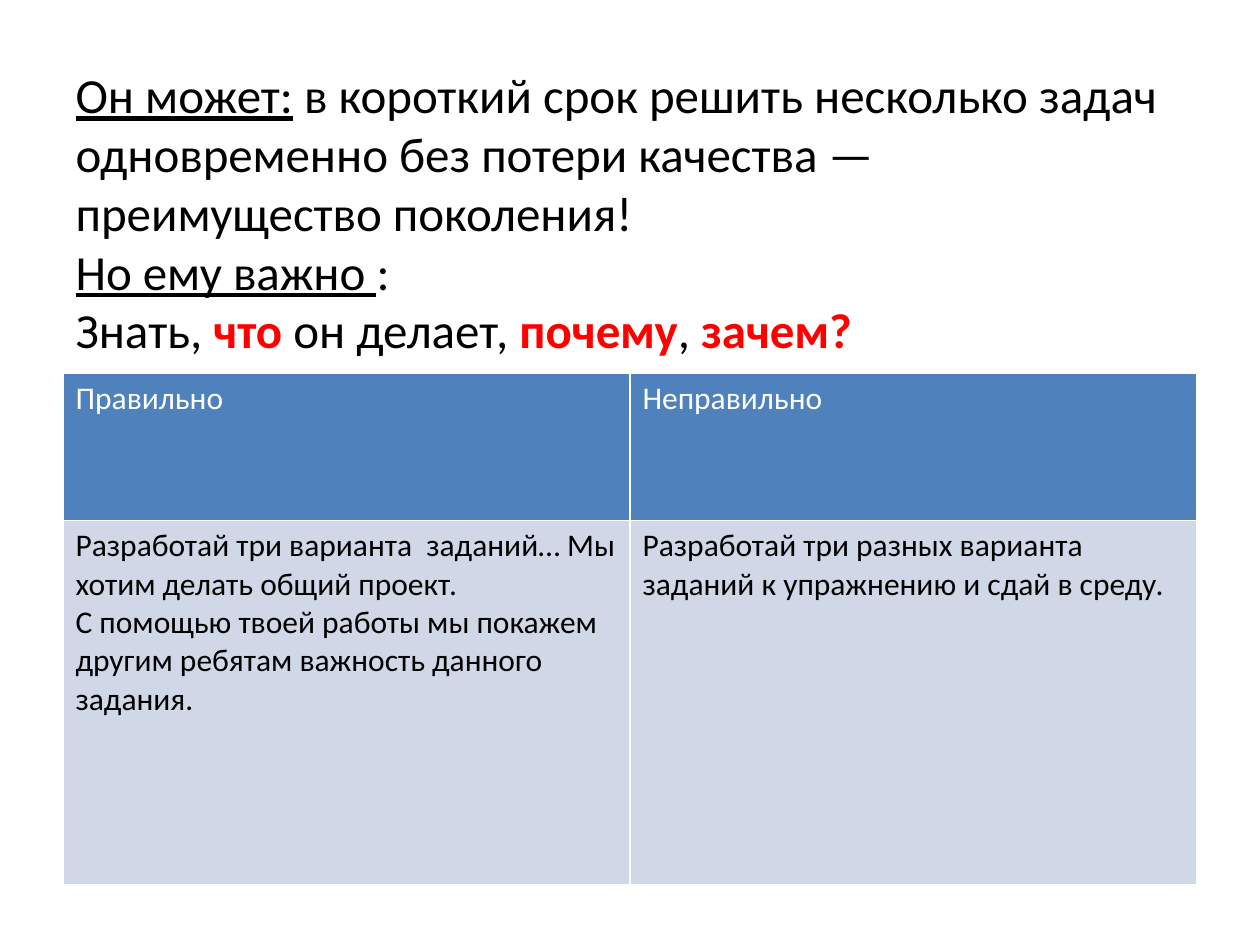
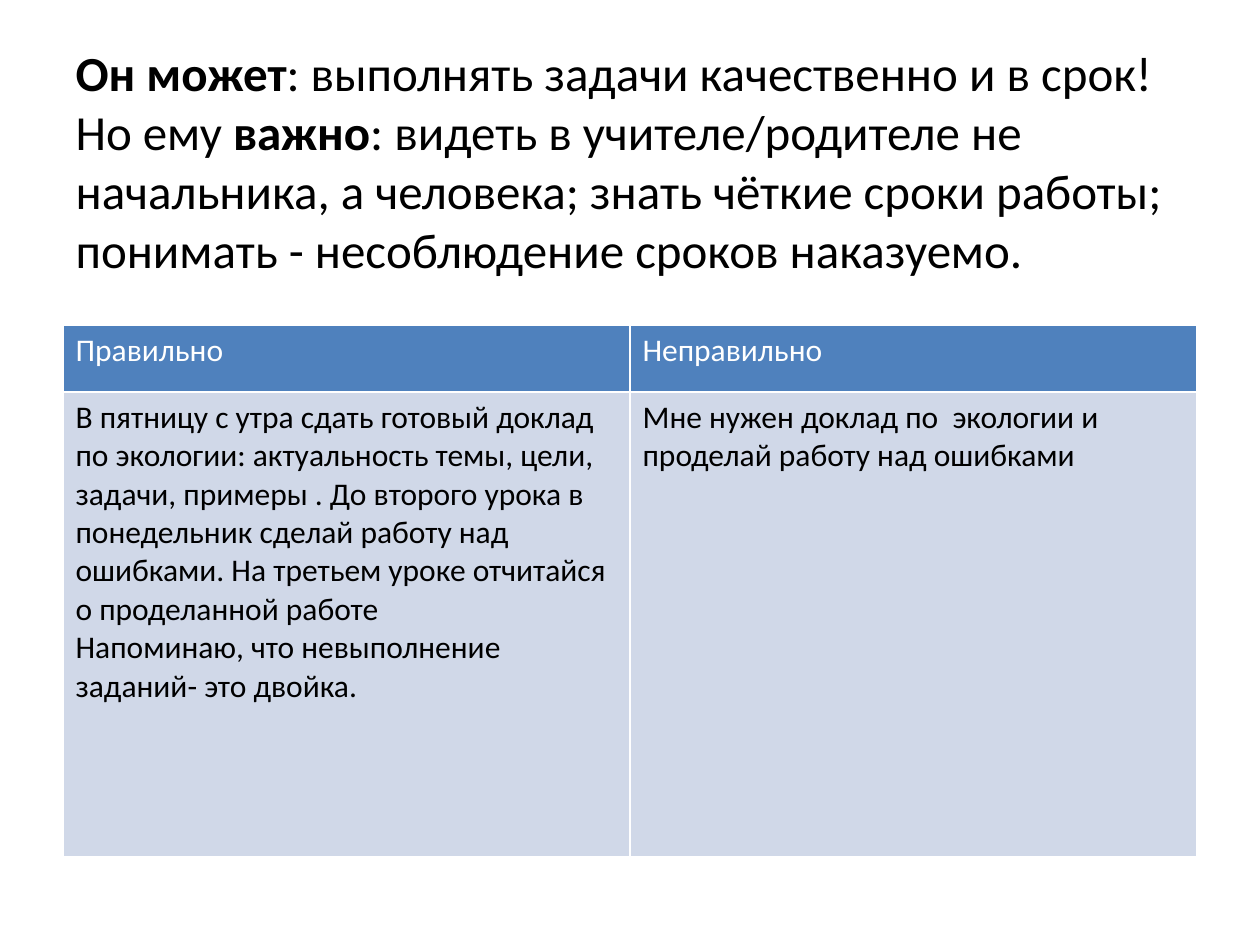
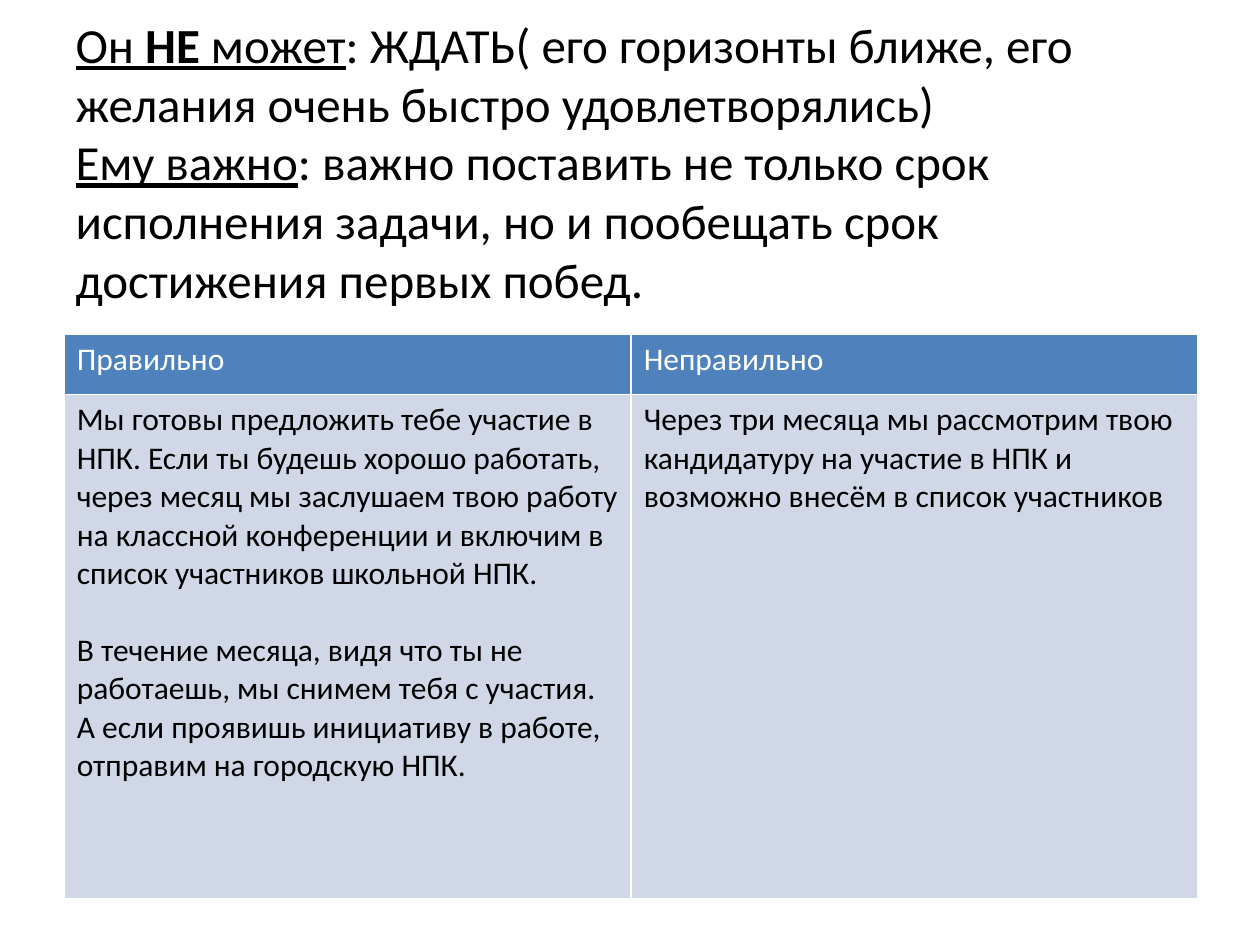
"""Build three slides that pair a title with a right/wrong comparison table."""
import pptx
import pptx.dml.color
import pptx.enum.text
import pptx.util

Inches = pptx.util.Inches
FONT = "Calibri"
BLACK, WHITE, RED = "000000", "FFFFFF", "FF0000"
HEADER_FILL, BODY_FILL = "4F81BD", "D0D8E8"
HEADINGS = ["Правильно", "Неправильно"]
COLUMN_WIDTH = 4.5
TITLE_SIZE, TABLE_SIZE = 28, 18
INSET, TITLE_LINE = 0.05, 0.47


def colour(hex_code):
    """Turn a hex string into a colour."""
    return pptx.dml.color.RGBColor.from_string(hex_code)


def add_text(para, text, size=TABLE_SIZE, color=BLACK, bold=False, underline=False):
    """Add formatted text to a paragraph, with a line break at each newline."""
    for index, line in enumerate(text.split("\n")):
        if index:
            para.add_line_break()
        if line:
            span = para.add_run()
            span.text = line
            span.font.name = FONT
            span.font.size = pptx.util.Pt(size)
            span.font.color.rgb = colour(color)
            span.font.bold = bold
            span.font.underline = underline


plain = {}
strong = {"bold": True}
lined = {"underline": True}
alert = {"bold": True, "color": RED}

slides = [
    {
        "title_top": 0.55, "title_height": 2.73, "lines_below": 1,
        "title": [
            ("Он может:", lined),
            (" в короткий срок решить несколько задач одновременно без потери качества — "
             "преимущество поколения!\n", plain),
            ("Но ему важно ", lined), (":\nЗнать, ", plain), ("что ", alert),
            ("он делает, ", plain), ("почему", alert), (", ", plain), ("зачем?", alert),
        ],
        "table_left": 0.5, "table_top": 2.96, "row_heights": [1.17, 2.89], "gap": 0,
        "right": ["Разработай три варианта  заданий… Мы хотим делать общий проект.",
                  "С помощью твоей работы мы покажем другим ребятам важность данного задания."],
        "wrong": ["Разработай три разных варианта заданий к упражнению и сдай в среду."],
    },
    {
        "title_top": 0.3, "title_height": 1.95, "lines_below": 0,
        "title": [
            ("Он может", strong),
            (": выполнять задачи качественно и в срок!\nНо ему ", plain),
            ("важно", strong),
            (": видеть в учителе/родителе не начальника, а человека; знать чёткие сроки "
             "работы; понимать - несоблюдение сроков наказуемо.", plain),
        ],
        "table_left": 0.5, "table_top": 2.58, "row_heights": [0.53, 3.69], "gap": 0,
        "right": ["В пятницу с утра сдать готовый доклад по экологии: актуальность темы, цели, "
                  "задачи, примеры . До второго урока в понедельник сделай работу над ошибками. "
                  "На третьем уроке отчитайся о проделанной работе\n"
                  "Напоминаю, что невыполнение заданий- это двойка."],
        "wrong": ["Мне нужен доклад по  экологии и проделай работу над ошибками"],
    },
    {
        "title_top": 0.3, "title_height": 2.43, "lines_below": 1,
        "title": [
            ("Он ", lined), ("НЕ", {"bold": True, "underline": True}), (" может", lined),
            (": ЖДАТЬ( его горизонты ближе, его желания очень быстро удовлетворялись)\n", plain),
            ("Ему важно", lined),
            (": важно поставить не только срок исполнения задачи, но и пообещать срок "
             "достижения первых побед.", plain),
        ],
        "table_left": 0.51, "table_top": 2.65, "row_heights": [0.48, 4], "gap": 22,
        "right": ["Мы готовы предложить тебе участие в НПК. Если ты будешь хорошо работать, "
                  "через месяц мы заслушаем твою работу на классной конференции и включим в "
                  "список участников школьной НПК.",
                  "В течение месяца, видя что ты не работаешь, мы снимем тебя с участия. "
                  "А если проявишь инициативу в работе, отправим на городскую НПК."],
        "wrong": ["Через три месяца мы рассмотрим твою кандидатуру на участие в НПК и "
                  "возможно внесём в список участников"],
    },
]

deck = pptx.Presentation()
deck.slide_width, deck.slide_height = Inches(10), Inches(7.5)

for content in slides:
    page = deck.slides.add_slide(deck.slide_layouts[5])

    title = page.shapes.title
    title.left, title.top = Inches(0.5), Inches(content["title_top"])
    title.width, title.height = Inches(2 * COLUMN_WIDTH), Inches(content["title_height"])
    frame = title.text_frame
    frame.word_wrap = True
    frame.auto_size = pptx.enum.text.MSO_AUTO_SIZE.NONE
    frame.vertical_anchor = pptx.enum.text.MSO_ANCHOR.MIDDLE
    frame.margin_bottom = Inches(INSET + content["lines_below"] * TITLE_LINE)
    heading = frame.paragraphs[0]
    heading.alignment = pptx.enum.text.PP_ALIGN.LEFT
    for text, style in content["title"]:
        add_text(heading, text, size=TITLE_SIZE, **style)

    heights = content["row_heights"]
    table = page.shapes.add_table(
        2, 2, Inches(content["table_left"]), Inches(content["table_top"]),
        Inches(2 * COLUMN_WIDTH), Inches(sum(heights))).table
    for row, height in zip(table.rows, heights):
        row.height = Inches(height)
    for column, (name, advice) in enumerate(zip(HEADINGS, [content["right"], content["wrong"]])):
        table.columns[column].width = Inches(COLUMN_WIDTH)
        rows = [([name], HEADER_FILL, WHITE), (advice, BODY_FILL, BLACK)]
        for row, (paragraphs, fill, color) in enumerate(rows):
            cell = table.cell(row, column)
            cell.fill.solid()
            cell.fill.fore_color.rgb = colour(fill)
            for index, text in enumerate(paragraphs):
                para = cell.text_frame.paragraphs[0]
                if index:
                    para = cell.text_frame.add_paragraph()
                    para.space_before = pptx.util.Pt(content["gap"])
                add_text(para, text, color=color)

deck.save("out.pptx")
